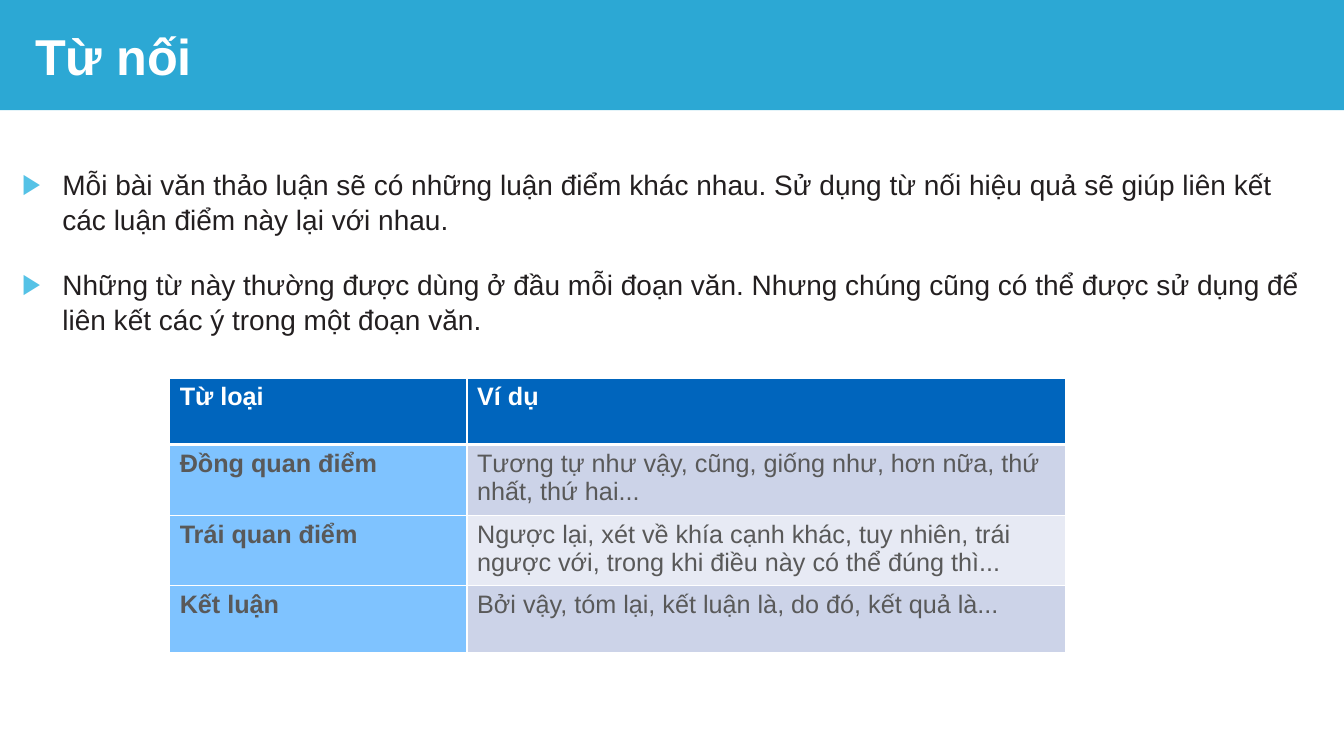
from dataclasses import dataclass

from lxml.etree import SubElement
from pptx import Presentation
from pptx.dml.color import RGBColor
from pptx.enum.shapes import MSO_SHAPE
from pptx.enum.text import MSO_ANCHOR
from pptx.oxml.ns import qn
from pptx.util import Emu, Inches, Pt

FONT = "Arial"
UNIT = Inches(1) // 12


@dataclass
class Box:
    col: float
    row: float
    wide: float
    high: float


@dataclass
class Style:
    size: float
    color: str
    bold: bool = False


@dataclass
class Entry:
    kind: str
    sample: str
    fills: tuple[str, str]
    styles: tuple[Style, Style]
    base: float = 1


HEAD = Style(18, "FFFFFF", True)
LABEL = Style(18, "595959", True)
PLAIN = Style(18, "595959")
BODY = Style(20, "231F20")
TITLE = Style(36, "FFFFFF", True)

POINTS = [
    "Mỗi bài văn thảo luận sẽ có những luận điểm khác nhau. Sử dụng từ nối hiệu quả sẽ giúp liên kết các luận điểm này lại với nhau.",
    "Những từ này thường được dùng ở đầu mỗi đoạn văn. Nhưng chúng cũng có thể được sử dụng để liên kết các ý trong một đoạn văn.",
]
ENTRIES = [
    Entry("Từ loại", "Ví dụ", ("0065BD", "0065BD"), (HEAD, HEAD), 3),
    Entry("Đồng quan điểm", "Tương tự như vậy, cũng, giống như, hơn nữa, thứ nhất, thứ hai...",
          ("7FC3FF", "CCD3E8"), (LABEL, PLAIN)),
    Entry("Trái quan điểm", "Ngược lại, xét về khía cạnh khác, tuy nhiên, trái ngược với, trong khi điều này có thể đúng thì...",
          ("7FC3FF", "E7EAF4"), (LABEL, PLAIN)),
    Entry("Kết luận", "Bởi vậy, tóm lại, kết luận là, do đó, kết quả là...",
          ("7FC3FF", "CCD3E8"), (LABEL, PLAIN)),
]
WIDTHS = (35.4, 71.3)
ROW = 7.92


def grid(count: float) -> Emu:
    return Emu(round(count * UNIT))


def place(box: Box) -> tuple[Emu, Emu, Emu, Emu]:
    return grid(box.col), grid(box.row), grid(box.wide), grid(box.high)


def paint(target, color: str) -> None:
    target.solid()
    target.fore_color.rgb = RGBColor.from_string(color)


def write(para, text: str, style: Style) -> None:
    run = para.add_run()
    run.text = text
    run.font.name = FONT
    run.font.size = Pt(style.size)
    run.font.bold = style.bold
    paint(run.font.fill, style.color)


def bullet(para, color: str) -> None:
    props = para._p.get_or_add_pPr()
    props.set("marL", str(Inches(0.4)))
    props.set("indent", str(-Inches(0.4)))
    tint = SubElement(props, qn("a:buClr"))
    SubElement(tint, qn("a:srgbClr"), val=color)
    SubElement(props, qn("a:buFont"), typeface=FONT)
    SubElement(props, qn("a:buChar"), char="▶")


def border(cell, base: float) -> None:
    props = cell._tc.get_or_add_tcPr()
    for side, width in (("L", 1), ("R", 1), ("T", 1), ("B", base)):
        line = SubElement(props, qn(f"a:ln{side}"), w=str(Pt(width)))
        fill = SubElement(line, qn("a:solidFill"))
        SubElement(fill, qn("a:srgbClr"), val="FFFFFF")


def frame(slide, box: Box):
    text = slide.shapes.add_textbox(*place(box)).text_frame
    text.word_wrap = True
    return text


def banner(slide) -> None:
    band = slide.shapes.add_shape(MSO_SHAPE.RECTANGLE, *place(Box(0, 0, 160, 13.1)))
    band.shadow.inherit = False
    paint(band.fill, "2CA8D4")
    band.line.fill.background()
    text = frame(slide, Box(3, 1.45, 155, 10.2))
    text.vertical_anchor = MSO_ANCHOR.MIDDLE
    write(text.paragraphs[0], "Từ nối", TITLE)


def points(slide) -> None:
    text = frame(slide, Box(1.45, 19.1, 154.6, 61))
    for index, point in enumerate(POINTS):
        para = text.add_paragraph() if index else text.paragraphs[0]
        bullet(para, "55C2E6")
        para.line_spacing = 1.05
        para.space_before = Pt(9 if index else 0)
        para.space_after = Pt(12)
        write(para, point, BODY)


def table(slide) -> None:
    box = Box(20.2, 45, sum(WIDTHS), ROW * len(ENTRIES))
    chart = slide.shapes.add_table(len(ENTRIES), len(WIDTHS), *place(box)).table
    chart.horz_banding = False
    for column, width in zip(chart.columns, WIDTHS):
        column.width = grid(width)
    for row, entry in zip(chart.rows, ENTRIES):
        row.height = grid(ROW)
        texts = (entry.kind, entry.sample)
        for cell, text, fill, style in zip(row.cells, texts, entry.fills, entry.styles):
            border(cell, entry.base)
            paint(cell.fill, fill)
            write(cell.text_frame.paragraphs[0], text, style)


def main() -> None:
    deck = Presentation()
    deck.slide_width = grid(160)
    deck.slide_height = grid(90)
    slide = deck.slides.add_slide(deck.slide_layouts[6])
    banner(slide)
    points(slide)
    table(slide)
    deck.save("out.pptx")


if __name__ == "__main__":
    main()
